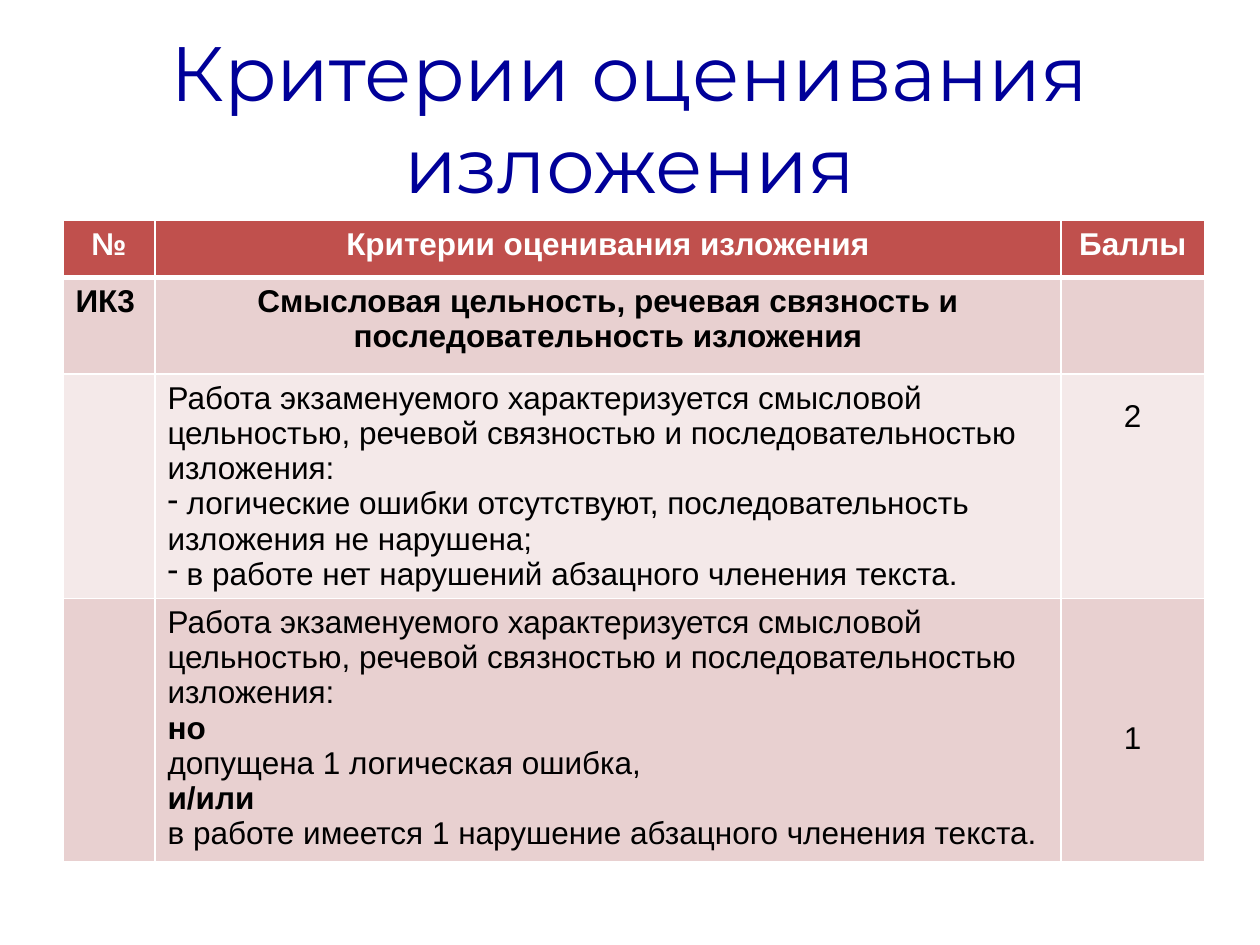
from lxml import etree
from pptx import Presentation
from pptx.dml.color import RGBColor
from pptx.enum.text import MSO_ANCHOR, PP_ALIGN
from pptx.oxml.ns import qn
from pptx.util import Inches, Pt

RED, ROSE, PALE = "C0504D", "E8D0D0", "F4E9E9"
WHITE, BLACK, NAVY = "FFFFFF", "000000", "000099"
INTRO = ("Работа экзаменуемого характеризуется смысловой цельностью, "
         "речевой связностью и последовательностью изложения:")
FULL = [INTRO,
        " логические ошибки отсутствуют, последовательность изложения не нарушена;",
        " в работе нет нарушений абзацного членения текста."]
PARTIAL = [INTRO, "но", "допущена 1 логическая ошибка,", "и/или",
           "в работе имеется 1 нарушение абзацного членения текста."]
HEADING = "Смысловая цельность, речевая связность и последовательность изложения"


def rgb(value):
    """Turn a hex string into a colour."""
    return RGBColor.from_string(value)


def add_text(p, text, size=18, color=BLACK, bold=False, font="Arial", align=PP_ALIGN.LEFT):
    """Write one formatted run into a paragraph."""
    p.alignment = align
    r = p.add_run()
    r.text = text
    r.font.size, r.font.bold, r.font.name = Pt(size), bold, font
    r.font.color.rgb = rgb(color)


def add_dash(p):
    """Give a paragraph a dash bullet without an indent."""
    pPr = p._p.get_or_add_pPr()
    pPr.set("marL", "0")
    pPr.set("indent", "0")
    etree.SubElement(pPr, qn("a:buChar")).set("char", "-")


def set_borders(cell, bottom=1):
    """Draw white lines around a cell."""
    tcPr = cell._tc.get_or_add_tcPr()
    for i, (side, width) in enumerate(zip("LRTB", (1, 1, 1, bottom))):
        ln = etree.Element(qn(f"a:ln{side}"), w=str(Pt(width)))
        fill = etree.SubElement(ln, qn("a:solidFill"))
        etree.SubElement(fill, qn("a:srgbClr")).set("val", WHITE)
        tcPr.insert(i, ln)


def fill_cell(cell, lines, fill, top=0.05, bottom=1, bold_lines=(), **fmt):
    """Fill a cell and write its lines, with dashes where a line starts with a space."""
    cell.fill.solid()
    cell.fill.fore_color.rgb = rgb(fill)
    set_borders(cell, bottom)
    cell.margin_left = cell.margin_right = Inches(0.1)
    cell.margin_top, cell.margin_bottom = Inches(top), Inches(0.05)
    tf = cell.text_frame
    for i, line in enumerate(lines):
        p = tf.paragraphs[0] if i == 0 else tf.add_paragraph()
        add_text(p, line, **{"bold": line in bold_lines, **fmt})
        if line.startswith(" "):
            add_dash(p)


def add_title(s, text):
    """Place and format the slide title."""
    sp = s.shapes.title
    sp.left, sp.top, sp.width, sp.height = map(Inches, (0.5, 0.3, 9, 1.25))
    tf = sp.text_frame
    tf.word_wrap, tf.vertical_anchor = True, MSO_ANCHOR.MIDDLE
    add_text(tf.paragraphs[0], text, size=44, color=NAVY, font="Montserrat",
             align=PP_ALIGN.CENTER)


def add_criteria(s):
    """Add the table of criteria and points."""
    widths, heights = (0.73, 7.19, 1.14), (0.45, 0.77, 1.76, 2.09)
    tbl = s.shapes.add_table(len(heights), len(widths), Inches(0.5), Inches(1.75),
                             Inches(sum(widths)), Inches(sum(heights))).table
    for col, width in zip(tbl.columns, widths):
        col.width = Inches(width)
    for row, height in zip(tbl.rows, heights):
        row.height = Inches(height)
    center = {"align": PP_ALIGN.CENTER}
    for c, text in enumerate(("№", "Критерии оценивания изложения", "Баллы")):
        fill_cell(tbl.cell(0, c), [text], RED, bottom=3, color=WHITE, bold=True, **center)
    fill_cell(tbl.cell(1, 0), ["ИК3"], ROSE, bold=True)
    fill_cell(tbl.cell(1, 1), [HEADING], ROSE, bold=True, **center)
    fill_cell(tbl.cell(1, 2), [], ROSE)
    levels = ((FULL, "2", PALE, 0.2), (PARTIAL, "1", ROSE, 0.97))
    for r, (lines, points, fill, top) in enumerate(levels, 2):
        fill_cell(tbl.cell(r, 0), [], fill)
        fill_cell(tbl.cell(r, 1), lines, fill, bold_lines=("но", "и/или"))
        fill_cell(tbl.cell(r, 2), [points], fill, top=top, **center)


def main():
    """Build and save the slide."""
    prs = Presentation()
    prs.slide_width, prs.slide_height = Inches(10), Inches(7.5)
    s = prs.slides.add_slide(prs.slide_layouts[5])
    add_title(s, "Критерии оценивания изложения")
    add_criteria(s)
    prs.save("out.pptx")


if __name__ == "__main__":
    main()
